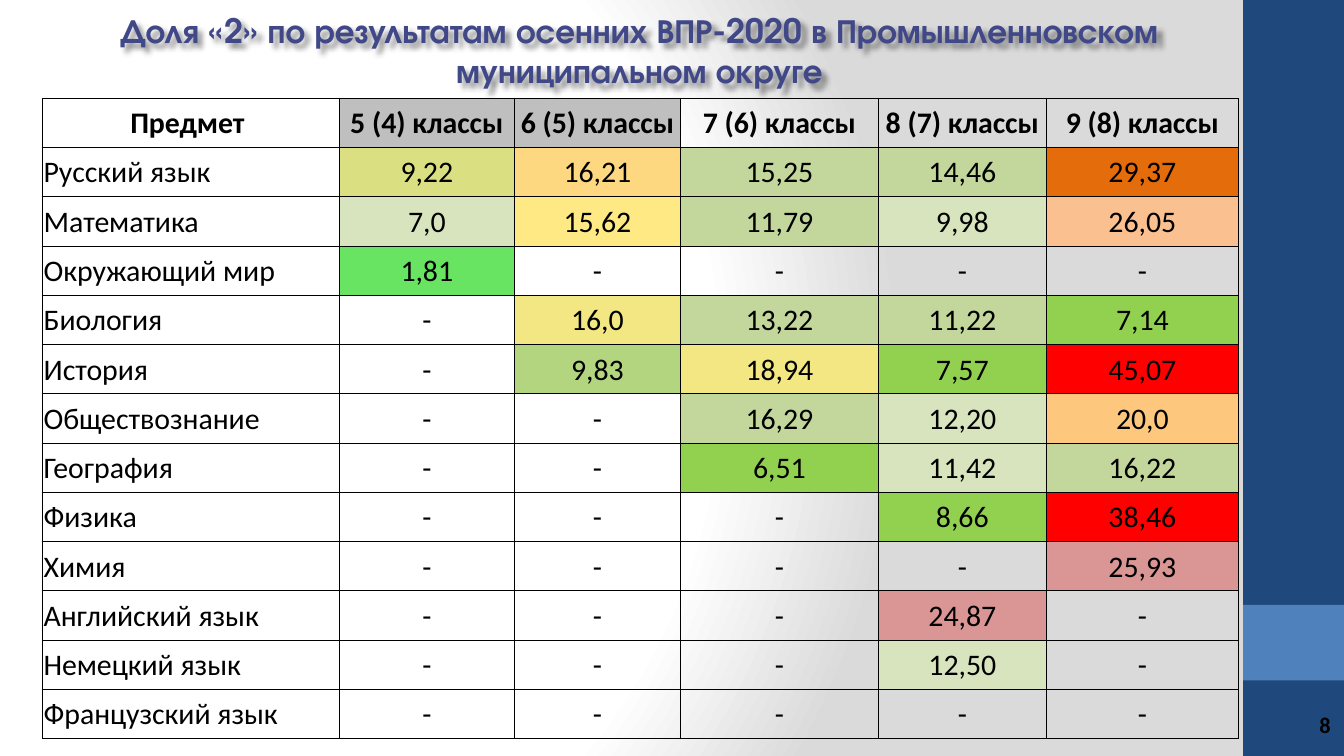
from lxml.etree import SubElement as Sub
from pptx import Presentation
from pptx.dml.color import RGBColor
from pptx.enum.shapes import MSO_SHAPE as Shape
from pptx.enum.text import MSO_ANCHOR as Anchor, MSO_AUTO_SIZE as Auto, PP_ALIGN as Align
from pptx.oxml import parse_xml
from pptx.oxml.ns import nsdecls, qn
from pptx.util import Pt

TITLE = "Доля «2» по результатам осенних ВПР-2020 в Промышленновском муниципальном округе"
NUMBER = "8"
GREY, NONE = "BFBFBF", ("-", None)
LEAF, OLIVE, PALE = "92D050", "C3D69B", "D7E4BD"
SAND, ROSE, RED = "F2E783", "D99694", "FF0000"
HEAD = [("Предмет ", None), ("5 (4) классы", GREY), ("6 (5) классы", GREY),
        ("7 (6) классы", None), ("8 (7) классы", None), ("9 (8) классы", None)]
MARKS = {
    "Русский язык": [("9,22", "DAE081"), ("16,21", "FED881"), ("15,25", OLIVE),
                     ("14,46", OLIVE), ("29,37", "E46C0A")],
    "Математика": [("7,0", PALE), ("15,62", "FFE984"), ("11,79", OLIVE),
                   ("9,98", PALE), ("26,05", "FAC090")],
    "Окружающий мир": [("1,81", "68E462"), NONE, NONE, NONE, NONE],
    "Биология": [NONE, ("16,0", SAND), ("13,22", OLIVE), ("11,22", OLIVE), ("7,14", LEAF)],
    "История": [NONE, ("9,83", "B3D57F"), ("18,94", SAND), ("7,57", LEAF), ("45,07", RED)],
    "Обществознание": [NONE, NONE, ("16,29", OLIVE), ("12,20", PALE), ("20,0", "FEC77E")],
    "География": [NONE, NONE, ("6,51", LEAF), ("11,42", PALE), ("16,22", OLIVE)],
    "Физика": [NONE, NONE, NONE, ("8,66", LEAF), ("38,46", RED)],
    "Химия": [NONE, NONE, NONE, NONE, ("25,93", ROSE)],
    "Английский язык": [NONE, NONE, NONE, ("24,87", ROSE), NONE],
    "Немецкий язык": [NONE, NONE, NONE, ("12,50", PALE), NONE],
    "Французский язык": [NONE] * 5,
}
ROWS = [HEAD] + [[(name, None)] + marks for name, marks in MARKS.items()]
WIDTHS = [159.1, 93.8, 89, 106, 90, 102.9]
ROW = 26.4
BARS = [(0, 405, "1F497D"), (324, 40.5, "4F81BD")]
STOPS = [(0, "FFFFFF"), (75000, "FFFFFF"), (100000, "DADADA")]
EDGES = ("a:lnL", "a:lnR", "a:lnT", "a:lnB")


def tint(text):
    return RGBColor.from_string(text)


def paint(fill, color):
    if color:
        fill.solid()
        fill.fore_color.rgb = tint(color)
    else:
        fill.background()


def write(frame, text, align, size, font="Calibri", color="000000", bold=False):
    para = frame.paragraphs[0]
    para.alignment = align
    run = para.add_run()
    run.text = text
    for key, val in {"size": Pt(size), "name": font, "bold": bold}.items():
        setattr(run.font, key, val)
    run.font.color.rgb = tint(color)


def place(shape, left, top, width, height):
    box = {"left": left, "top": top, "width": width, "height": height}
    for key, val in box.items():
        setattr(shape, key, Pt(val))


def inset(item, left, top, right, bottom):
    sides = {"left": left, "top": top, "right": right, "bottom": bottom}
    for key, val in sides.items():
        setattr(item, "margin_" + key, Pt(val))


def shade(slide):
    stops = "".join(f'<a:gs pos="{pos}"><a:srgbClr val="{color}"/></a:gs>'
                    for pos, color in STOPS)
    back = parse_xml(
        f'<p:bg {nsdecls("p", "a")}><p:bgPr><a:gradFill rotWithShape="1">'
        f'<a:gsLst>{stops}</a:gsLst><a:path path="circle">'
        '<a:fillToRect l="20000" t="50000" r="100000" b="50000"/></a:path>'
        '</a:gradFill><a:effectLst/></p:bgPr></p:bg>')
    slide.element.cSld.insert(0, back)


def head(slide):
    title = slide.shapes.title
    place(title, 21.6, 1.4, 642.2, 51)
    frame = title.text_frame
    frame.word_wrap = True
    frame.auto_size = Auto.SHAPE_TO_FIT_TEXT
    frame.vertical_anchor = Anchor.MIDDLE
    write(frame, TITLE, Align.CENTER, 18, "TeX Gyre Adventor", "404888", True)
    title.fill.background()
    title.element.spPr.append(parse_xml(
        f'<a:effectLst {nsdecls("a")}><a:outerShdw blurRad="38100" dist="38100" '
        'dir="2700000" algn="tl"><a:srgbClr val="000000"><a:alpha val="43000"/>'
        '</a:srgbClr></a:outerShdw></a:effectLst>'))


def side(slide):
    for top, height, color in BARS:
        bar = slide.shapes.add_shape(Shape.RECTANGLE, Pt(666), Pt(top), Pt(54), Pt(height))
        bar.shadow.inherit = False
        paint(bar.fill, color)
        bar.line.fill.background()
    box = slide.shapes.add_textbox(Pt(669), Pt(377.5), Pt(51), Pt(21.6))
    frame = box.text_frame
    frame.word_wrap = True
    frame.vertical_anchor = Anchor.MIDDLE
    inset(frame, 7.2, 3.6, 7.2, 3.6)
    write(frame, NUMBER, Align.RIGHT, 12, bold=True)


def border(cell):
    props = cell._tc.get_or_add_tcPr()
    for edge in EDGES:
        line = Sub(props, qn(edge), w=str(Pt(0.5)))
        Sub(Sub(line, qn("a:solidFill")), qn("a:srgbClr"), val="000000")


def grid(slide):
    table = slide.shapes.add_table(len(ROWS), len(WIDTHS), Pt(22.7), Pt(52.6),
                                   Pt(sum(WIDTHS)), Pt(ROW * len(ROWS))).table
    table.first_row = table.horz_banding = False
    for col, width in zip(table.columns, WIDTHS):
        col.width = Pt(width)
    for r, row in enumerate(ROWS):
        table.rows[r].height = Pt(ROW)
        for c, (text, color) in enumerate(row):
            cell = table.cell(r, c)
            border(cell)
            paint(cell.fill, color)
            cell.vertical_anchor = Anchor.MIDDLE
            inset(cell, 0.7, 0.7, 0.7, 0)
            align = Align.LEFT if r and not c else Align.CENTER
            write(cell.text_frame, text, align, 16, bold=r == 0)


def main():
    """Build the slide on the share of failing marks by subject and grade."""
    deck = Presentation()
    deck.slide_width, deck.slide_height = Pt(720), Pt(405)
    slide = deck.slides.add_slide(deck.slide_layouts[5])
    shade(slide)
    side(slide)
    head(slide)
    grid(slide)
    deck.save("out.pptx")


if __name__ == "__main__":
    main()
